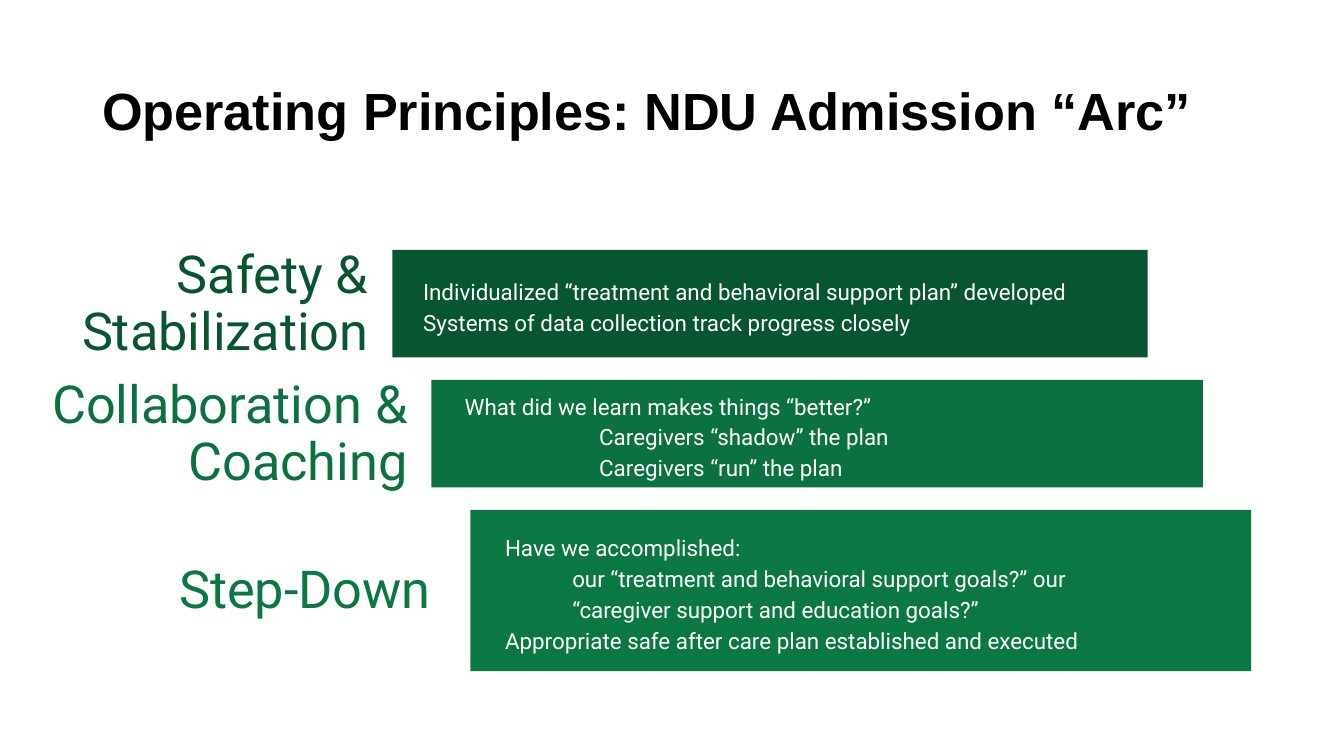
from pptx import Presentation
from pptx import util as u
from pptx.dml.color import RGBColor
from pptx.enum import shapes, text

COLORS = {
    "title": "000000",
    "body": "FFFFFF",
    "safety": "085631",
    "coaching": "0B7140",
    "stepdown": "0B7743",
}
SLIDE_WIDTH = u.Inches(10)
SLIDE_HEIGHT = SLIDE_WIDTH * 9 // 16
CELL = SLIDE_WIDTH / 100
BAND_LEFT, BAND_TOP = 29.2, 18.6
STEP_COLUMNS, STEP_ROWS = 2.9, 9.67

STAGES = [
    dict(color="safety", label="Safety & Stabilization",
         label_box=(-0.8, 29.2, 6.9), band_size=(56.2, 8),
         body_box=(1.3, 51.3, 6.3),
         lines=[("Individualized “treatment and behavioral support plan” developed", 0),
                ("Systems of data collection track progress closely", 0)]),
    dict(color="coaching", label="Collaboration & Coaching",
         label_box=(-0.8, 32.1, 6.9), band_size=(57.4, 8),
         body_box=(1.5, 51.7, 3.6),
         lines=[("What did we learn makes things “better?”", 0),
                ("Caregivers “shadow” the plan", 10),
                ("Caregivers “run” the plan", 10)]),
    dict(color="stepdown", label="Step-Down ",
         label_box=(0.1, 33.9, 10.3), band_size=(58.1, 12),
         body_box=(1.6, 49.7, 5.4),
         lines=[("Have we accomplished:", 0),
                ("our “treatment and behavioral support goals?” "
                 "our “caregiver support and education goals?”", 5),
                ("Appropriate safe after care plan established and executed", 0)]),
]


def cells(count):
    return u.Emu(round(count * CELL))


def place(shape, left, top, width, height):
    shape.left, shape.top = cells(left), cells(top)
    shape.width, shape.height = cells(width), cells(height)


def write(shape, lines, *, color, size, font="Roboto", bold=False,
          align=text.PP_ALIGN.LEFT, spacing=0.9, insets=(1, 0.5)):
    frame = shape.text_frame
    frame.word_wrap = True
    frame.auto_size = text.MSO_AUTO_SIZE.NONE
    frame.vertical_anchor = text.MSO_ANCHOR.MIDDLE
    frame.margin_left = frame.margin_right = cells(insets[0])
    frame.margin_top = frame.margin_bottom = cells(insets[1])
    for index, (words, indent) in enumerate(lines):
        para = frame.paragraphs[0] if index == 0 else frame.add_paragraph()
        para.alignment = align
        para.line_spacing = spacing
        para.space_before = para.space_after = u.Pt(0)
        if indent:
            properties = para._p.get_or_add_pPr()
            properties.set("marL", str(cells(indent)))
            properties.set("indent", "0")
        span = para.add_run()
        span.text = words
        span.font.name = font
        span.font.size = u.Pt(size)
        span.font.bold = bold
        span.font.color.rgb = RGBColor.from_string(COLORS[color])


def add_text(page, left, middle, width, height, lines, **style):
    box = page.shapes.add_textbox(0, 0, 0, 0)
    place(box, left, middle - height / 2, width, height)
    write(box, lines, **style)


def add_title(page, left, top, width, height):
    title = page.shapes.title
    place(title, left, top, width, height)
    write(title, [("Operating Principles: NDU Admission “Arc”", 0)],
          color="title", size=28, font="Arial", bold=True, insets=(0.7, 0.4))


def add_stage(page, left, top, stage):
    width, height = stage["band_size"]
    middle = top + height / 2 + 0.1
    label_left, label_width, label_height = stage["label_box"]
    body_offset, body_width, body_height = stage["body_box"]

    add_text(page, label_left, middle, label_width, label_height,
             [(stage["label"], 0)], color=stage["color"], size=28,
             align=text.PP_ALIGN.RIGHT)

    band = page.shapes.add_shape(shapes.MSO_SHAPE.RECTANGLE, 0, 0, 0, 0)
    place(band, left, top, width, height)
    band.shadow.inherit = False
    band.fill.solid()
    band.fill.fore_color.rgb = RGBColor.from_string(COLORS[stage["color"]])
    band.line.fill.background()

    add_text(page, left + body_offset, middle, body_width, body_height,
             stage["lines"], color="body", size=12, spacing=1.15)


def main():
    deck = Presentation()
    deck.slide_width, deck.slide_height = SLIDE_WIDTH, SLIDE_HEIGHT
    page = deck.slides.add_slide(deck.slide_layouts.get_by_name("Title Only"))
    add_title(page, 6.9, 3, 86.2, 10.9)
    for index, stage in enumerate(STAGES):
        add_stage(page, BAND_LEFT + index * STEP_COLUMNS,
                  BAND_TOP + index * STEP_ROWS, stage)
    deck.save("out.pptx")


if __name__ == "__main__":
    main()
